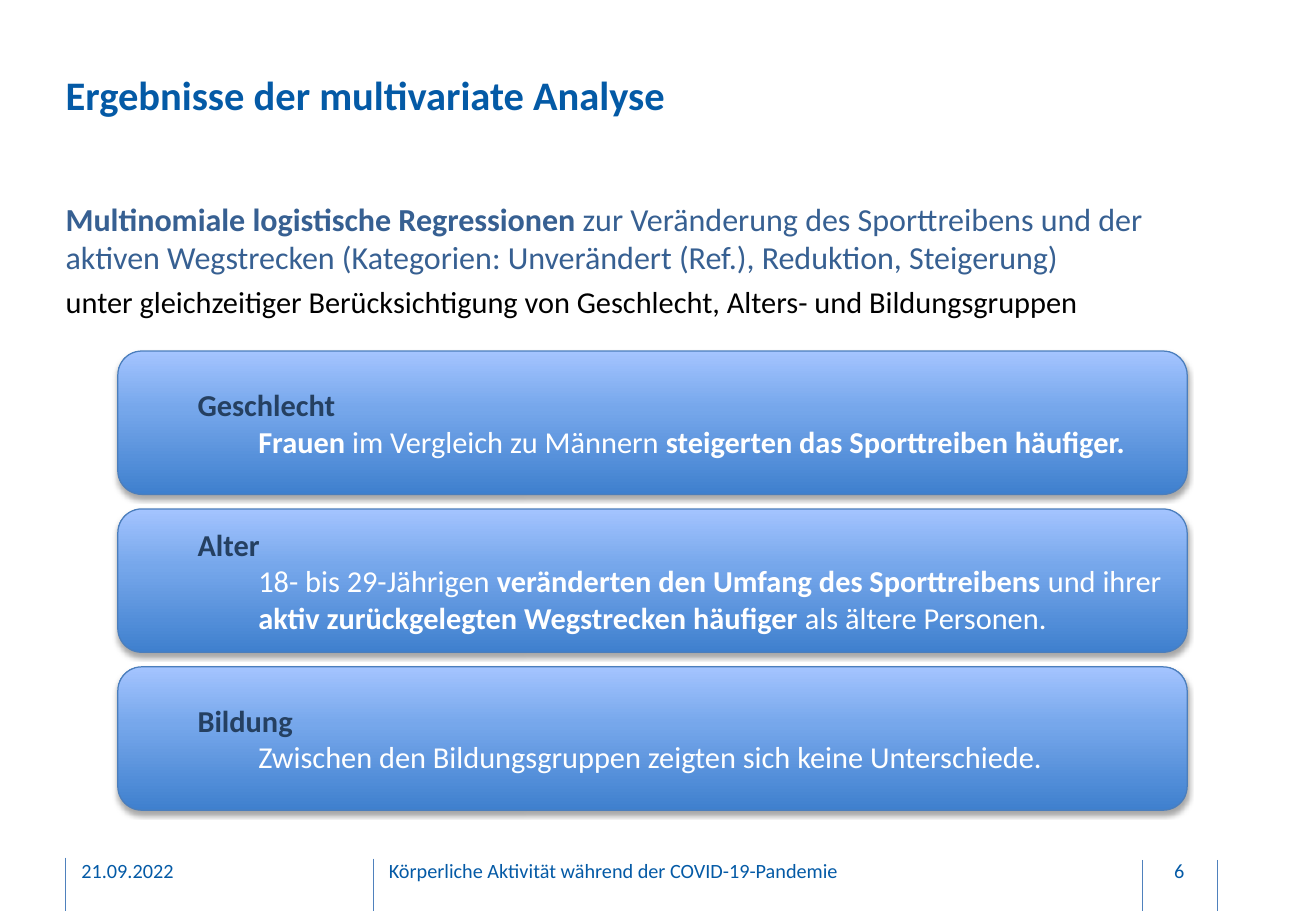
from lxml.etree import SubElement
from pptx import Presentation
from pptx.dml.color import RGBColor
from pptx.enum.shapes import MSO_CONNECTOR, MSO_SHAPE
from pptx.enum.text import MSO_ANCHOR, MSO_AUTO_SIZE, PP_ALIGN
from pptx.oxml import parse_xml
from pptx.oxml.ns import nsdecls, qn
from pptx.util import Inches, Pt

COLORS = {
    "brand": "045AA6",
    "lead": "376092",
    "black": "000000",
    "white": "FFFFFF",
    "heading": "254061",
    "rule": "4F81BD",
    "outline": "4B7EBC",
    "card_bottom": "3F80CE",
    "card_middle": "76A7EB",
    "card_top": "A4C4FF",
}
FONT = "Calibri"

CARDS = [
    ("Geschlecht", [
        ("Frauen ", True),
        ("im Vergleich zu Männern ", False),
        ("steigerten das Sporttreiben häufiger.", True),
    ]),
    ("Alter", [
        ("18- bis 29-Jährigen ", False),
        ("veränderten den Umfang des Sporttreibens ", True),
        ("und ihrer ", False),
        ("aktiv zurückgelegten Wegstrecken häufiger ", True),
        ("als ältere Personen.", False),
    ]),
    ("Bildung", [
        ("Zwischen den Bildungsgruppen zeigten sich keine Unterschiede.", False),
    ]),
]
LEAD = [
    ("Multinomiale logistische Regressionen ", True),
    ("zur Veränderung des Sporttreibens und der aktiven Wegstrecken "
     "(Kategorien: Unverändert (Ref.), Reduktion, Steigerung)", False),
]
CONDITION = [
    ("unter gleichzeitiger Berücksichtigung von Geschlecht, "
     "Alters- und Bildungsgruppen", False),
]
FOOTERS = [
    ("21.09.2022", 0.67, 2.2, PP_ALIGN.LEFT),
    ("Körperliche Aktivität während der COVID-19-Pandemie", 3.2, 5.29, PP_ALIGN.LEFT),
    ("6", 9.41, 0.59, PP_ALIGN.CENTER),
]
FOOTER_RULES = [(0.54, 7.06), (3.07, 7.07), (9.4, 7.08), (10.02, 7.08)]


class SlideBuilder:
    """Hold the slide and its style and add each kind of element."""

    def __init__(self, slide):
        """Keep the slide that receives the elements."""
        self.slide = slide

    def place(self, shape, left, top, width, height):
        """Move and size a shape in inches."""
        shape.left, shape.top = Inches(left), Inches(top)
        shape.width, shape.height = Inches(width), Inches(height)

    def prepare_frame(self, frame, anchor, side=0, edge=0):
        """Set wrapping, anchor and margins of a text frame."""
        frame.word_wrap = True
        frame.auto_size = MSO_AUTO_SIZE.NONE
        frame.vertical_anchor = anchor
        frame.margin_left = frame.margin_right = Inches(side)
        frame.margin_top = frame.margin_bottom = Inches(edge)

    def fill_paragraph(self, paragraph, parts, size, color, indent=0, before=0):
        """Fill a paragraph with text parts that are bold or regular."""
        properties = paragraph._p.get_or_add_pPr()
        properties.set("marL", str(Inches(indent)))
        properties.set("indent", "0")
        paragraph.space_before = Pt(before)
        SubElement(properties, qn("a:buNone"))
        for text, bold in parts:
            run = paragraph.add_run()
            run.text = text
            run.font.name = FONT
            run.font.size = Pt(size)
            run.font.bold = bold
            run.font.color.rgb = RGBColor.from_string(COLORS[color])

    def title(self, text):
        """Fill the title placeholder."""
        shape = self.slide.shapes.title
        self.place(shape, 0.54, 0.58, 7.34, 0.51)
        self.prepare_frame(shape.text_frame, MSO_ANCHOR.TOP)
        paragraph = shape.text_frame.paragraphs[0]
        paragraph.alignment = PP_ALIGN.LEFT
        self.fill_paragraph(paragraph, [(text, True)], 24, "brand")

    def body(self, lead, condition):
        """Fill the body placeholder with its two paragraphs."""
        shape = self.slide.placeholders[1]
        self.place(shape, 0.54, 1.64, 9.46, 5.16)
        frame = shape.text_frame
        self.prepare_frame(frame, MSO_ANCHOR.TOP)
        self.fill_paragraph(frame.paragraphs[0], lead, 19, "lead")
        self.fill_paragraph(frame.add_paragraph(), condition, 18, "black", before=4.3)

    def card(self, top, heading, parts):
        """Add a rounded card with a heading and an indented finding."""
        shape = self.slide.shapes.add_shape(
            MSO_SHAPE.ROUNDED_RECTANGLE,
            Inches(0.97), Inches(top), Inches(8.8), Inches(1.18))
        shape.line.color.rgb = RGBColor.from_string(COLORS["outline"])
        shape.line.width = Pt(0.75)
        self.shade(shape)
        frame = shape.text_frame
        self.prepare_frame(frame, MSO_ANCHOR.MIDDLE, 0.1, 0.05)
        finding = frame.add_paragraph()
        for paragraph in frame.paragraphs:
            paragraph.alignment = PP_ALIGN.LEFT
        self.fill_paragraph(frame.paragraphs[0], [(heading, True)], 18, "heading", 0.5)
        self.fill_paragraph(finding, parts, 18, "white", 1)

    def shade(self, shape):
        """Give a shape the card gradient and a soft shadow below."""
        shape.fill.gradient()
        gradient = shape._element.spPr.find(qn("a:gradFill"))
        stops = [(0, "card_bottom"), (60, "card_middle"), (100, "card_top")]
        stop_xml = "".join(
            f'<a:gs pos="{position * 1000}"><a:srgbClr val="{COLORS[name]}"/></a:gs>'
            for position, name in stops)
        gradient.getparent().replace(gradient, parse_xml(
            f'<a:gradFill {nsdecls("a")} rotWithShape="1"><a:gsLst>{stop_xml}</a:gsLst>'
            '<a:lin ang="16200000" scaled="0"/></a:gradFill>'))
        shape.shadow.inherit = False
        effects = shape._element.spPr.find(qn("a:effectLst"))
        effects.append(parse_xml(
            f'<a:outerShdw {nsdecls("a")} blurRad="{Pt(3.1)}" dist="{Pt(1.8)}" '
            f'dir="5400000" rotWithShape="0"><a:srgbClr val="{COLORS["black"]}">'
            '<a:alpha val="35000"/></a:srgbClr></a:outerShdw>'))

    def footer(self, text, left, width, alignment):
        """Add one footer text."""
        shape = self.slide.shapes.add_textbox(
            Inches(left), Inches(6.97), Inches(width), Inches(0.4))
        self.prepare_frame(shape.text_frame, MSO_ANCHOR.MIDDLE, 0, 0.05)
        paragraph = shape.text_frame.paragraphs[0]
        paragraph.alignment = alignment
        self.fill_paragraph(paragraph, [(text, False)], 12, "brand")

    def footer_rule(self, left, top):
        """Add a thin vertical rule that runs to the slide's lower edge."""
        rule = self.slide.shapes.add_connector(
            MSO_CONNECTOR.STRAIGHT,
            Inches(left), Inches(top), Inches(left), Inches(7.5))
        rule.line.color.rgb = RGBColor.from_string(COLORS["rule"])
        rule.line.width = Pt(0.5)
        SubElement(rule._element.spPr, qn("a:effectLst"))


def main():
    """Build the slide and save the presentation."""
    presentation = Presentation()
    presentation.slide_width = Inches(10.83)
    presentation.slide_height = Inches(7.5)
    builder = SlideBuilder(
        presentation.slides.add_slide(presentation.slide_layouts[1]))
    for left, top in FOOTER_RULES:
        builder.footer_rule(left, top)
    for footer in FOOTERS:
        builder.footer(*footer)
    builder.title("Ergebnisse der multivariate Analyse")
    builder.body(LEAD, CONDITION)
    for index, (heading, parts) in enumerate(CARDS):
        builder.card(2.89 + 1.3 * index, heading, parts)
    presentation.save("out.pptx")


if __name__ == "__main__":
    main()
